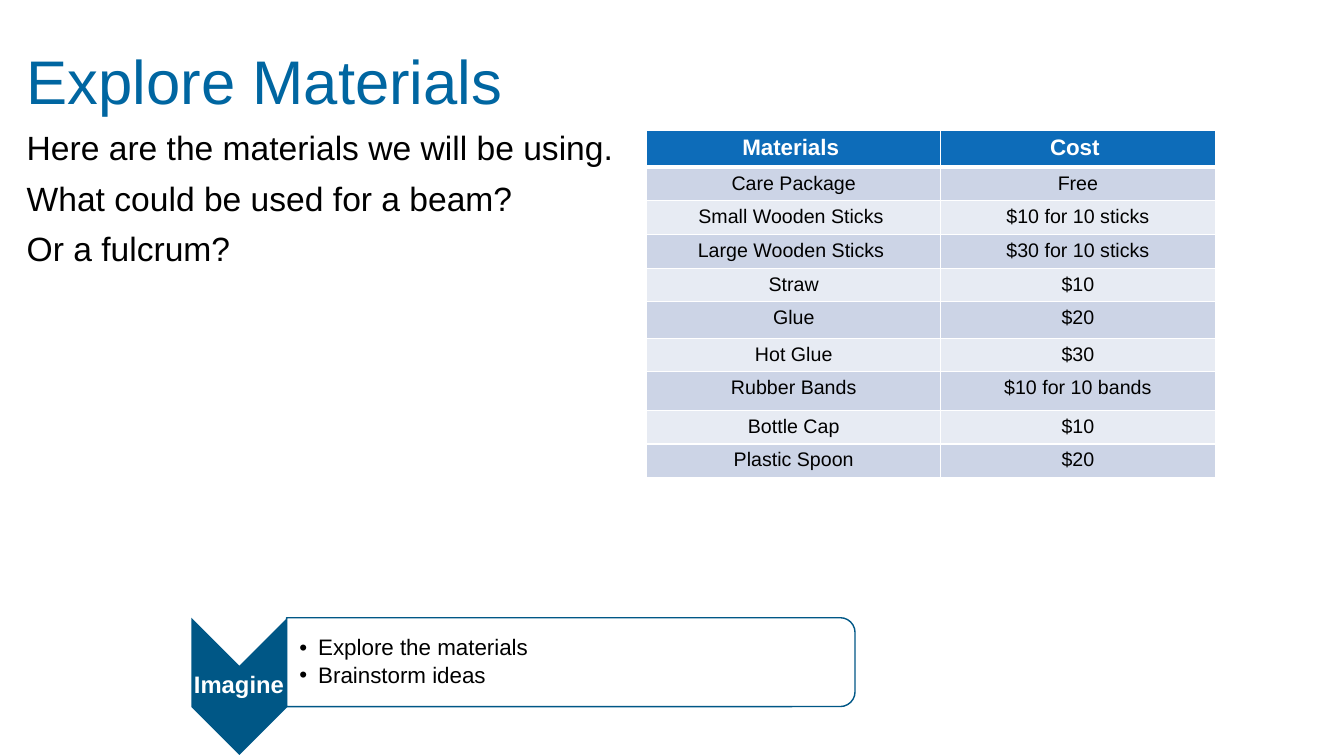
from lxml import etree
from pptx import Presentation
from pptx.dml.color import RGBColor
from pptx.enum import shapes, text
from pptx.oxml import ns
from pptx.util import Pt

TITLE_BLUE, DEEP_BLUE, HEADER_BLUE = "0066A1", "005786", "0D6CB9"
BANDS = ("CCD4E6", "E7EBF3")
WHITE, BLACK = "FFFFFF", "000000"

QUESTIONS = [
    "Here are the materials we will be using.",
    "What could be used for a beam?",
    "Or a fulcrum?",
]
STEPS = ["Explore the materials", "Brainstorm ideas"]
PRICES = [
    ("Materials ", "Cost "),
    ("Care Package", "Free"),
    ("Small Wooden Sticks ", "$10 for 10 sticks"),
    ("Large Wooden Sticks ", "$30 for 10 sticks"),
    ("Straw", "$10"),
    ("Glue", "$20"),
    ("Hot Glue", "$30"),
    ("Rubber Bands", "$10 for 10 bands"),
    ("Bottle Cap", "$10"),
    ("Plastic Spoon", "$20"),
]
COLUMN_WIDTHS = (210, 196)
ROW_HEIGHT = 24
TALL_ROWS = {0: 26, 5: 26, 7: 27.5}


def color(value):
    return RGBColor.from_string(value)


def add_xml(parent, tag, **attributes):
    return etree.SubElement(parent, ns.qn(tag), attributes)


def set_all(target, formats):
    for name, value in formats.items():
        setattr(target, name, value)


def style_font(paragraph, size, ink, bold=False):
    set_all(paragraph.font, {"name": "Arial", "size": Pt(size), "bold": bold})
    paragraph.font.color.rgb = color(ink)


def add_bullet(paragraph, indent):
    properties = paragraph._p.get_or_add_pPr()
    properties.set("marL", str(Pt(indent)))
    properties.set("indent", str(-Pt(indent)))
    add_xml(properties, "a:buFont", typeface="Arial")
    add_xml(properties, "a:buChar", char="•")


def add_text(slide, box, lines, size, ink, bold=False, before=0, after=0,
             indent=0, align=text.PP_ALIGN.LEFT, anchor=text.MSO_ANCHOR.MIDDLE,
             margins=(7.2, 3.6, 7.2, 3.6)):
    frame = slide.shapes.add_textbox(*map(Pt, box)).text_frame
    left, top, right, bottom = map(Pt, margins)
    set_all(frame, {
        "word_wrap": True, "vertical_anchor": anchor,
        "margin_left": left, "margin_top": top,
        "margin_right": right, "margin_bottom": bottom,
    })
    for index, line in enumerate(lines):
        paragraph = frame.paragraphs[0] if index == 0 else frame.add_paragraph()
        paragraph.text = line
        set_all(paragraph, {
            "alignment": align, "line_spacing": 0.9,
            "space_before": Pt(before if index else 0), "space_after": Pt(after),
        })
        if indent:
            add_bullet(paragraph, indent)
        style_font(paragraph, size, ink, bold)


def add_turned_shape(slide, preset, box, fill, line=None, opacity=100):
    shape = slide.shapes.add_shape(preset, *map(Pt, box))
    shape.rotation = 90
    shape.shadow.inherit = False
    shape.fill.solid()
    shape.fill.fore_color.rgb = color(fill)
    if opacity < 100:
        tint = shape._element.spPr.find(ns.qn("a:solidFill"))[0]
        add_xml(tint, "a:alpha", val=str(opacity * 1000))
    if line:
        shape.line.color.rgb = color(line)
        shape.line.width = Pt(1)
    else:
        shape.line.fill.background()


def add_borders(cell, widths):
    properties = cell._tc.get_or_add_tcPr()
    for side, width in zip("LRTB", widths):
        border = add_xml(properties, f"a:ln{side}", w=str(Pt(width)))
        add_xml(add_xml(border, "a:solidFill"), "a:srgbClr", val=WHITE)


def add_price_table(slide, left, top):
    heights = [TALL_ROWS.get(row, ROW_HEIGHT) for row in range(len(PRICES))]
    prices = slide.shapes.add_table(
        len(PRICES), len(COLUMN_WIDTHS), Pt(left), Pt(top),
        Pt(sum(COLUMN_WIDTHS)), Pt(sum(heights))).table
    for column, width in zip(prices.columns, COLUMN_WIDTHS):
        column.width = Pt(width)
    for row, (values, height) in enumerate(zip(PRICES, heights)):
        prices.rows[row].height = Pt(height)
        header = row == 0
        for column, value in enumerate(values):
            cell = prices.cell(row, column)
            add_borders(cell, (1, 1, 3 if row == 1 else 1, 3 if header else 1))
            cell.fill.solid()
            cell.fill.fore_color.rgb = color(
                HEADER_BLUE if header else BANDS[(row - 1) % 2])
            cell.text = value
            paragraph = cell.text_frame.paragraphs[0]
            paragraph.alignment = text.PP_ALIGN.CENTER
            style_font(paragraph, 16 if header else 14,
                       WHITE if header else BLACK, header)


def main():
    deck = Presentation()
    set_all(deck, {"slide_width": Pt(960), "slide_height": Pt(540)})
    slide = deck.slides.add_slide(deck.slide_layouts[6])

    add_text(slide, (12, 8, 828, 105), ["Explore Materials"], 44, TITLE_BLUE)

    preset = shapes.MSO_SHAPE
    add_turned_shape(slide, preset.CHEVRON, (122, 456, 98, 68.5), DEEP_BLUE)
    add_text(slide, (136.5, 475, 68.5, 29.5), ["Imagine"], 17, WHITE, bold=True,
             align=text.PP_ALIGN.CENTER, margins=(0.75,) * 4)
    add_turned_shape(slide, preset.ROUND_2_SAME_RECTANGLE,
                     (376, 270, 63.5, 406), WHITE, DEEP_BLUE, opacity=90)
    add_text(slide, (205.2, 444.5, 402.5, 57.5), STEPS, 16, BLACK, after=2.4,
             indent=13.5, margins=(8.6, 0.75, 0.75, 0.75))

    add_text(slide, (12, 90.5, 456, 106), QUESTIONS, 24, BLACK, before=10,
             anchor=text.MSO_ANCHOR.TOP)
    add_price_table(slide, 462, 93)

    deck.save("out.pptx")


if __name__ == "__main__":
    main()
